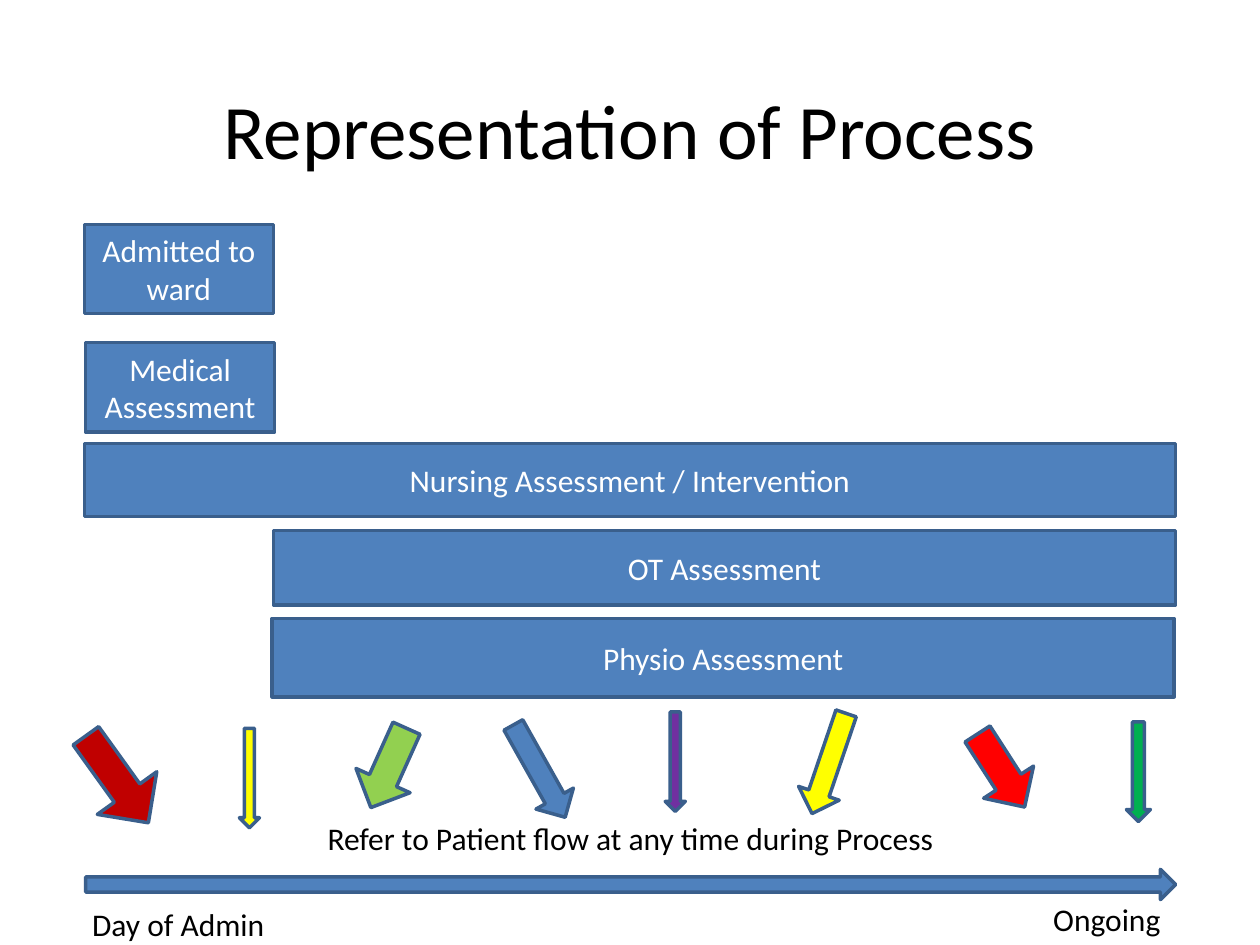
from dataclasses import dataclass

from pptx import Presentation
from pptx.dml.color import RGBColor
from pptx.enum import shapes, text
from pptx.util import Inches, Pt

BLUE, OUTLINE = "4F81BD", "3A5F8C"
BLACK, WHITE = "000000", "FFFFFF"
FONT = "Calibri"
KIND = shapes.MSO_SHAPE


@dataclass
class Box:
    label: str
    left: float
    top: float
    width: float
    height: float


@dataclass
class Arrow:
    left: float
    top: float
    width: float
    height: float
    fill: str
    rotation: float = 0
    shaft: float = 0.5
    kind: int = KIND.DOWN_ARROW


STAGES = [
    Box("Admitted to ward", 0.67, 1.78, 1.5, 0.71),
    Box("Medical Assessment", 0.68, 2.72, 1.5, 0.71),
    Box("Nursing Assessment / Intervention", 0.67, 3.52, 8.66, 0.58),
    Box("OT Assessment", 2.17, 4.21, 7.16, 0.59),
    Box("Physio Assessment", 2.16, 4.91, 7.16, 0.62),
]
CAPTIONS = [
    Box("Refer to Patient flow at any time during Process", 1.54, 6.48, 6.93, 0.34),
    Box("Day of Admin", 0, 7.16, 2.83, 0.34),
    Box("Ongoing", 7.37, 7.12, 2.83, 0.34),
]
ARROWS = [
    Arrow(0.68, 6.9, 8.65, 0.24, BLUE, kind=KIND.RIGHT_ARROW),
    Arrow(0.64, 5.76, 0.58, 0.85, "C00000", 324.3, 0.431),
    Arrow(1.9, 5.78, 0.16, 0.79, "FFFF00"),
    Arrow(2.85, 5.75, 0.47, 0.69, "92D050", 24.2),
    Arrow(4.11, 5.7, 0.34, 0.84, BLUE, 330.7),
    Arrow(5.28, 5.65, 0.16, 0.79, "7030A0"),
    Arrow(6.41, 5.64, 0.34, 0.84, "FFFF00", 18.8),
    Arrow(7.71, 5.77, 0.47, 0.69, "FF0000", 327.2),
    Arrow(8.94, 5.73, 0.19, 0.79, "00B050"),
]


def color(value: str) -> RGBColor:
    return RGBColor.from_string(value)


def frame(item: Box | Arrow) -> list[int]:
    return [Inches(n) for n in (item.left, item.top, item.width, item.height)]


def write(shape, label: str, size: float, ink: str) -> None:
    """Put one centred paragraph in the shape."""
    shape.text_frame.text = label
    shape.text_frame.word_wrap = True
    shape.text_frame.vertical_anchor = text.MSO_ANCHOR.MIDDLE
    para = shape.text_frame.paragraphs[0]
    para.alignment = text.PP_ALIGN.CENTER
    para.font.name = FONT
    para.font.size = Pt(size)
    para.font.color.rgb = color(ink)


def paint(shape, fill: str) -> None:
    shape.fill.solid()
    shape.fill.fore_color.rgb = color(fill)
    shape.line.color.rgb = color(OUTLINE)
    shape.line.width = Pt(2)


def draw_box(slide, box: Box, filled: bool) -> None:
    shape = slide.shapes.add_shape(KIND.FLOWCHART_PROCESS, *frame(box))
    shape.shadow.inherit = False
    if filled:
        paint(shape, BLUE)
    else:
        shape.fill.background()
        shape.line.fill.background()
    write(shape, box.label, 18, WHITE if filled else BLACK)


def draw_arrow(slide, arrow: Arrow) -> None:
    shape = slide.shapes.add_shape(arrow.kind, *frame(arrow))
    shape.shadow.inherit = False
    shape.rotation = arrow.rotation
    shape.adjustments[0] = arrow.shaft
    paint(shape, arrow.fill)


def main() -> None:
    deck = Presentation()
    deck.slide_width, deck.slide_height = Inches(10), Inches(7.5)
    slide = deck.slides.add_slide(deck.slide_layouts.get_by_name("Title Only"))
    title = slide.shapes.title
    title.left, title.top, title.width, title.height = frame(Box("", 0.5, 0.4, 9, 1.25))
    write(title, "Representation of Process", 44, BLACK)

    for stage in STAGES:
        draw_box(slide, stage, filled=True)
    for arrow in ARROWS:
        draw_arrow(slide, arrow)
    for caption in CAPTIONS:
        draw_box(slide, caption, filled=False)
    deck.save("out.pptx")


if __name__ == "__main__":
    main()
